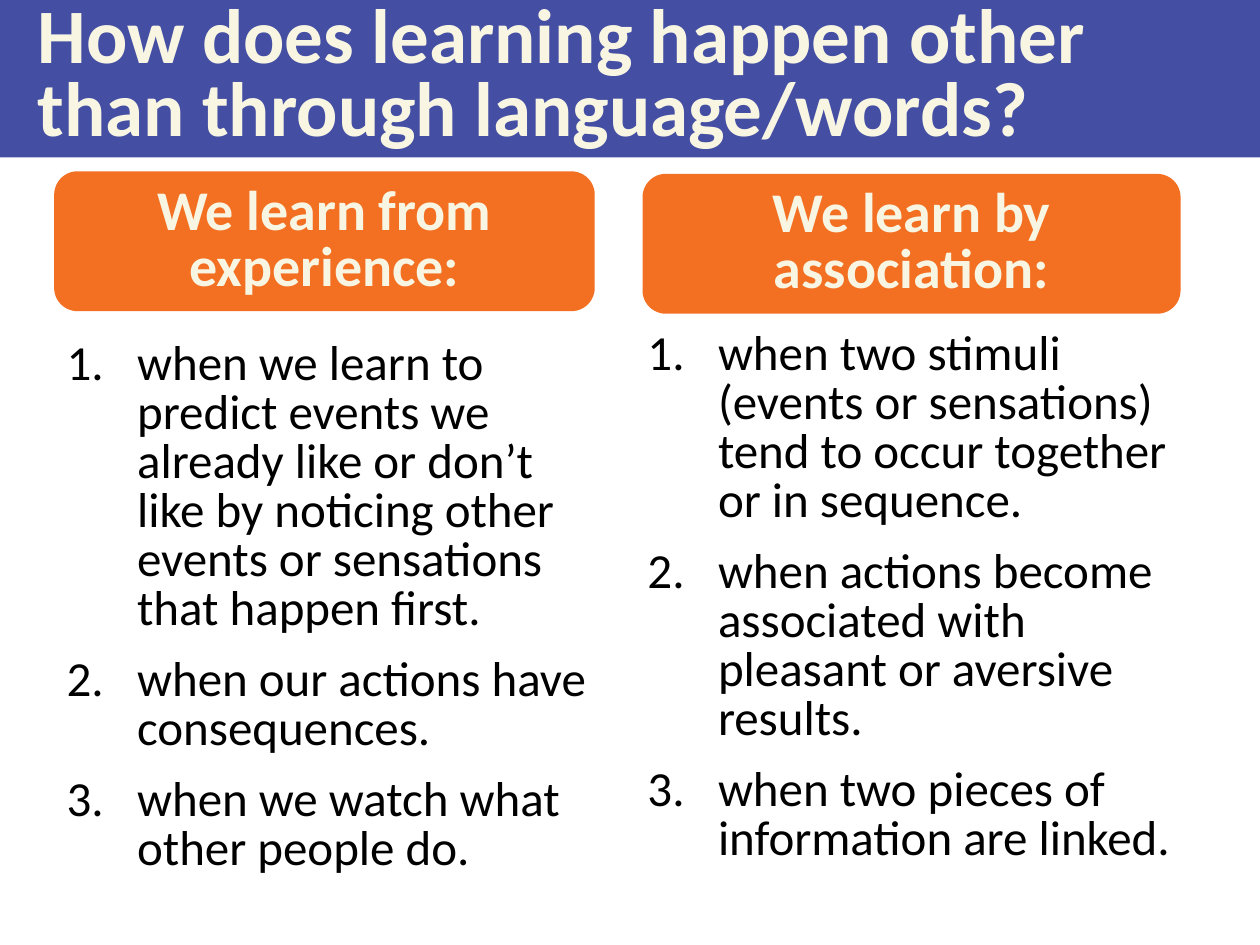
from dataclasses import dataclass

from lxml.etree import SubElement
from pptx import Presentation
from pptx.dml.color import RGBColor
from pptx.enum.shapes import MSO_SHAPE as Shape
from pptx.enum.text import MSO_ANCHOR as Anchor, PP_ALIGN as Align
from pptx.oxml.ns import qn
from pptx.util import Inches, Pt


@dataclass(frozen=True)
class Theme:
    font: str = "Calibri"
    banner: RGBColor = RGBColor(0x44, 0x4E, 0xA2)
    accent: RGBColor = RGBColor(0xF3, 0x6F, 0x21)
    light: RGBColor = RGBColor(0xF8, 0xF6, 0xE3)
    dark: RGBColor = RGBColor(0, 0, 0)
    title_size: float = 44
    heading_size: float = 32
    body_size: float = 28


@dataclass(frozen=True)
class Box:
    left: float
    top: float
    width: float
    height: float

    def inches(self) -> list:
        return [Inches(v) for v in (self.left, self.top, self.width, self.height)]


@dataclass(frozen=True)
class Column:
    heading: str
    heading_box: Box
    points: tuple[str, ...]
    points_box: Box


THEME = Theme()
HANGING = Inches(0.56)

COLUMNS = (
    Column(
        "We learn from experience:", Box(0.43, 1.36, 4.29, 1.11),
        ("when we learn to predict events we already like or don’t like by "
         "noticing other events or sensations that happen first.",
         "when our actions have consequences.",
         "when we watch what other people do."),
        Box(0.43, 2.66, 4.42, 4.81),
    ),
    Column(
        "We learn by association:", Box(5.1, 1.38, 4.27, 1.11),
        ("when two stimuli (events or sensations) tend to occur together "
         "or in sequence.",
         "when actions become associated with pleasant or aversive results.",
         "when two pieces of information are linked."),
        Box(5.04, 2.58, 4.51, 4.92),
    ),
)


def add_text(paragraph, text: str, size: float, color: RGBColor,
             leading: float, bold: bool = False) -> None:
    paragraph.line_spacing = Pt(leading)
    run = paragraph.add_run()
    run.text = text
    run.font.name = THEME.font
    run.font.size = Pt(size)
    run.font.bold = bold
    run.font.color.rgb = color


def add_panel(slide, kind: Shape, box: Box, fill: RGBColor, text: str,
              size: float, leading: float, align: Align):
    panel = slide.shapes.add_shape(kind, *box.inches())
    panel.shadow.inherit = False
    panel.fill.solid()
    panel.fill.fore_color.rgb = fill
    panel.line.fill.background()
    frame = panel.text_frame
    frame.word_wrap = True
    frame.vertical_anchor = Anchor.MIDDLE
    frame.paragraphs[0].alignment = align
    add_text(frame.paragraphs[0], text, size, THEME.light, leading, bold=True)
    return panel


def number_paragraph(paragraph) -> None:
    properties = paragraph._p.get_or_add_pPr()
    properties.set("marL", str(HANGING))
    properties.set("indent", str(-HANGING))
    SubElement(properties, qn("a:buFont"), typeface="+mj-lt")
    SubElement(properties, qn("a:buAutoNum"), type="arabicPeriod")


def add_points(slide, box: Box, points: tuple[str, ...]) -> None:
    frame = slide.shapes.add_textbox(*box.inches()).text_frame
    frame.word_wrap = True
    for index, point in enumerate(points):
        paragraph = frame.add_paragraph() if index else frame.paragraphs[0]
        paragraph.space_before = Pt(6.6 if index else 0)
        paragraph.space_after = Pt(6)
        add_text(paragraph, point, THEME.body_size, THEME.dark, leading=28)
        number_paragraph(paragraph)


def main() -> None:
    deck = Presentation()
    deck.slide_width, deck.slide_height = Inches(10), Inches(7.5)
    slide = deck.slides.add_slide(deck.slide_layouts[6])

    # Title banner
    banner = add_panel(slide, Shape.RECTANGLE, Box(0, 0, 10, 1.25), THEME.banner,
                       "How does learning happen other than through language/words?",
                       THEME.title_size, 42, Align.LEFT)
    banner.text_frame.margin_left = Inches(0.3)

    # Two columns: heading above a numbered list
    for column in COLUMNS:
        add_points(slide, column.points_box, column.points)
        add_panel(slide, Shape.ROUNDED_RECTANGLE, column.heading_box, THEME.accent,
                  column.heading, THEME.heading_size, 32, Align.CENTER)

    deck.save("out.pptx")


if __name__ == "__main__":
    main()
